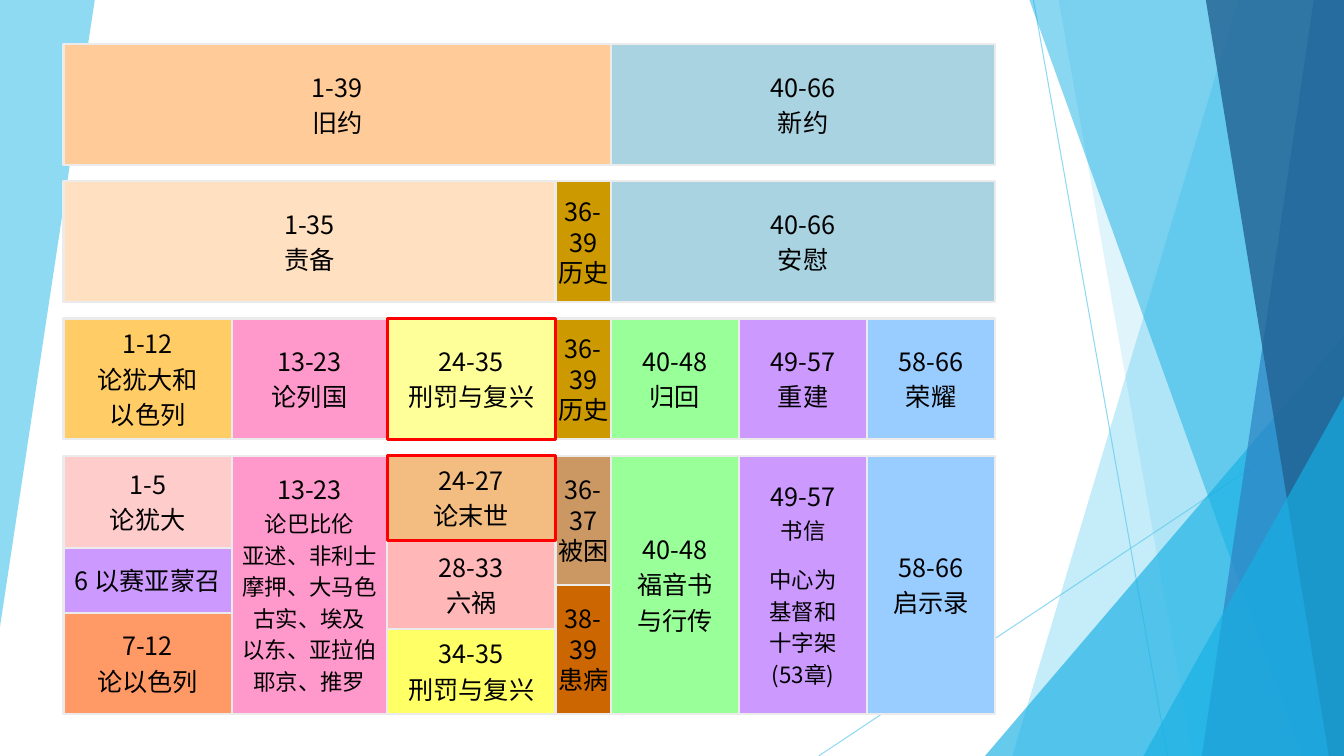
from lxml.etree import SubElement
from pptx import Presentation
from pptx.dml.color import RGBColor
from pptx.enum.shapes import MSO_CONNECTOR as LINK, MSO_SHAPE as FORM
from pptx.enum.text import MSO_ANCHOR as ANCHOR, PP_ALIGN as ALIGN
from pptx.oxml.ns import qn
from pptx.util import Inches, Pt

FONT = "Noto Sans CJK SC"
WIDE, HIGH = 13.33, 7.5

deck = Presentation()
deck.slide_width, deck.slide_height = Inches(WIDE), Inches(HIGH)
page = deck.slides.add_slide(deck.slide_layouts[6])


def paint(colour, value, alpha=100, holder=None):
    colour.rgb = RGBColor.from_string(value)
    if alpha < 100:
        tint = holder.element.find(".//" + qn("a:srgbClr"))
        SubElement(tint, qn("a:alpha")).set("val", str(alpha * 1000))


def add_cell(column, span_count, top, height, fill, edge, weight):
    left, right = columns[column], columns[column + span_count]
    box = page.shapes.add_shape(FORM.RECTANGLE, *map(Inches, (left, top, right - left, height)))
    box.shadow.inherit = False
    if fill:
        box.fill.solid()
        paint(box.fill.fore_color, fill)
    else:
        box.fill.background()
    paint(box.line.color, edge)
    box.line.width = Pt(weight)
    return box


for ends in [(10.25, 0, 11.58, HIGH), (WIDE, 4.03, 8.12, HIGH)]:
    ray = page.shapes.add_connector(LINK.STRAIGHT, *map(Inches, ends))
    paint(ray.line.color, "5FCBEF", 70, ray)
    ray.line.width = Pt(0.75)
    SubElement(ray.element.spPr, qn("a:effectLst"))

right_edge = [(WIDE, 0), (WIDE, HIGH)]
facets = [
    ([(0, 0), (0.94, 0), (0, 6.22)], "5FCBEF", 70),
    ([(12.28, 0), *right_edge, (10.04, HIGH)], "5FCBEF", 36),
    ([(10.5, 0), *right_edge, (11.83, HIGH)], "5FCBEF", 20),
    ((9.77, 3.33), "17B0E4", 66),
    ([(10.21, 0), *right_edge, (12.91, HIGH)], "17B0E4", 50),
    ([(13.03, 0), *right_edge, (11.92, HIGH)], "2E83C3", 70),
    ([(11.96, 0), *right_edge, (13.18, HIGH)], "226292", 80),
    ((11.34, 3.93), "17B0E4", 66),
]
for outline, colour, alpha in facets:
    if isinstance(outline, tuple):
        left, top = outline
        frame = map(Inches, (left, top, WIDE - left, HIGH - top))
        facet = page.shapes.add_shape(FORM.ISOSCELES_TRIANGLE, *frame)
        facet.adjustments[0] = 1
    else:
        points = [(Inches(x), Inches(y)) for x, y in outline]
        builder = page.shapes.build_freeform(*points[0])
        builder.add_line_segments(points[1:], close=True)
        facet = builder.convert_to_shape()
    facet.shadow.inherit = False
    facet.fill.solid()
    paint(facet.fill.fore_color, colour, alpha, facet)
    facet.line.fill.background()

columns = [0.63, 2.3, 3.84, 5.51, 6.06, 7.33, 8.6, 9.87]
HISTORY = 3
testament, theme, section, detail = [0.44 + 1.36 * row for row in range(4)]
BAND, FULL = 1.2, 2.56

cells = [
    (0, 4, testament, BAND, "FFCC99", "1-39|旧约"),
    (4, 3, testament, BAND, "A9D3E1", "40-66|新约"),
    (0, 3, theme, BAND, "FFE0C1", "1-35|责备"),
    (3, 1, theme, BAND, "CC9900", "36-|39|历史"),
    (4, 3, theme, BAND, "A9D3E1", "40-66|安慰"),
    (0, 1, section, BAND, "FFCC66", "1-12|论犹大和|以色列"),
    (1, 1, section, BAND, "FF99CC", "13-23|论列国"),
    (2, 1, section, BAND, "FFFF99", "24-35|刑罚与复兴"),
    (3, 1, section, BAND, "CC9900", "36-|39|历史"),
    (4, 1, section, BAND, "99FF99", "40-48|归回"),
    (5, 1, section, BAND, "CC99FF", "49-57|重建"),
    (6, 1, section, BAND, "99CCFF", "58-66|荣耀"),
]
stacks = [
    (0, [(0.92, "FFCCCC", "1-5|论犹大"), (0.64, "CC99FF", "6 以赛亚蒙召"),
         (1, "FF9966", "7-12|论以色列")]),
    (1, [(FULL, "FF99CC", "13-23|论巴比伦|亚述、非利士|摩押、大马色|古实、埃及|以东、亚拉伯|耶京、推罗")]),
    (2, [(0.84, "F3BD81", "24-27|论末世"), (0.88, "FFB7B7", "28-33|六祸"),
         (0.84, "FFFF66", "34-35|刑罚与复兴")]),
    (3, [(FULL / 2, "CB9763", "36-|37|被困"), (FULL / 2, "CC6600", "38-|39|患病")]),
    (4, [(FULL, "99FF99", "40-48|福音书|与行传")]),
    (5, [(FULL, "CC99FF", "49-57|书信|中心为|基督和|十字架|(53章)")]),
    (6, [(FULL, "99CCFF", "58-66|启示录")]),
]
for column, stack in stacks:
    top = detail
    for height, fill, text in stack:
        cells.append((column, 1, top, height, fill, text))
        top += height

frame_format = {"word_wrap": False, "vertical_anchor": ANCHOR.MIDDLE}
for column, span_count, top, height, fill, text in cells:
    box = add_cell(column, span_count, top, height, fill, "EBEBEB", 1.5)
    for name, value in frame_format.items():
        setattr(box.text_frame, name, value)
    lines = text.split("|")
    narrow = column == HISTORY and span_count == 1
    for index, line in enumerate(lines):
        para = box.text_frame.add_paragraph() if index else box.text_frame.paragraphs[0]
        size = 16 if index and len(lines) > 3 else 18
        para_format = {
            "alignment": ALIGN.CENTER,
            "line_spacing": Pt(size * 1.21),
            "space_before": Pt(12.5 if line == "中心为" else 0),
            "space_after": Pt(0 if narrow else size * 0.2),
        }
        for name, value in para_format.items():
            setattr(para, name, value)
        span = para.add_run()
        span.text = line
        for name, value in {"size": Pt(size), "name": FONT}.items():
            setattr(span.font, name, value)
        paint(span.font.color, "000000")
        SubElement(span.font.fill and para.runs[0]._r.get_or_add_rPr(), qn("a:ea")).set("typeface", FONT)

for top, height in [(section, BAND), (detail, 0.84)]:
    add_cell(2, 1, top, height, None, "FF0000", 2.25)

deck.save("out.pptx")
